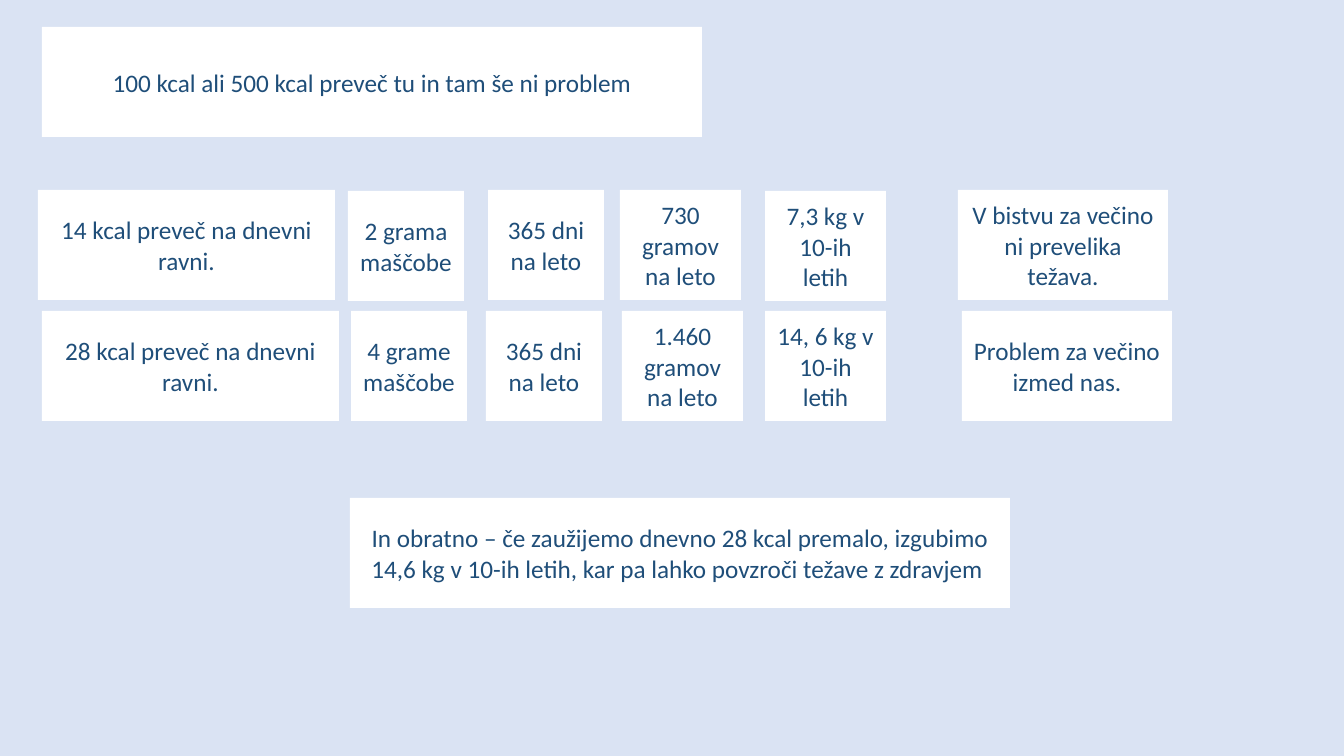
from pptx import Presentation
from pptx import util as u
from pptx.dml.color import RGBColor
from pptx.enum import shapes, text

PX = 914400 / 100.8
BOX_HEIGHT = 110


def px(length):
    return u.Emu(round(length * PX))


def add_box(left, top, width, wording):
    box = slide.shapes.add_shape(shapes.MSO_SHAPE.RECTANGLE,
                                 px(left), px(top), px(width), px(BOX_HEIGHT))
    box.shadow.inherit = False
    box.fill.solid()
    box.fill.fore_color.rgb = RGBColor.from_string("FFFFFF")
    box.line.fill.background()
    frame = box.text_frame
    frame.word_wrap = True
    frame.vertical_anchor = text.MSO_ANCHOR.MIDDLE
    frame.text = wording
    paragraph = frame.paragraphs[0]
    paragraph.alignment = text.PP_ALIGN.CENTER
    font = paragraph.runs[0].font
    font.name = "Calibri"
    font.size = u.Pt(18)
    font.color.rgb = RGBColor.from_string("1F4E79")


# Slide and background
prs = Presentation()
prs.slide_width, prs.slide_height = px(1344), px(756)
slide = prs.slides.add_slide(prs.slide_layouts[6])
slide.background.fill.solid()
slide.background.fill.fore_color.rgb = RGBColor.from_string("DAE3F3")

# Opening statement
add_box(42, 27, 660, "100 kcal ali 500 kcal preveč tu in tam še ni problem")

# Two daily surpluses, each followed through to its result: left, top, wording
widths = [297, 116, 116, 121, 121, 210]
surpluses = [
    [(38, 190, "14 kcal preveč na dnevni ravni."),
     (348, 191, "2 grama maščobe"),
     (488, 190, "365 dni na leto"),
     (620, 190, "730 gramov na leto"),
     (765, 191, "7,3 kg v 10-ih letih"),
     (958, 190, "V bistvu za večino ni prevelika težava.")],
    [(42, 311, "28 kcal preveč na dnevni ravni."),
     (351, 311, "4 grame maščobe"),
     (486, 311, "365 dni na leto"),
     (622, 311, "1.460 gramov na leto"),
     (765, 311, "14, 6 kg v 10-ih letih"),
     (962, 311, "Problem za večino izmed nas.")],
]
for steps in surpluses:
    for width, (left, top, wording) in zip(widths, steps):
        add_box(left, top, width, wording)

# The reverse case
add_box(350, 498, 660, "In obratno – če zaužijemo dnevno 28 kcal premalo, izgubimo "
        "14,6 kg v 10-ih letih, kar pa lahko povzroči težave z zdravjem ")

prs.save("out.pptx")
